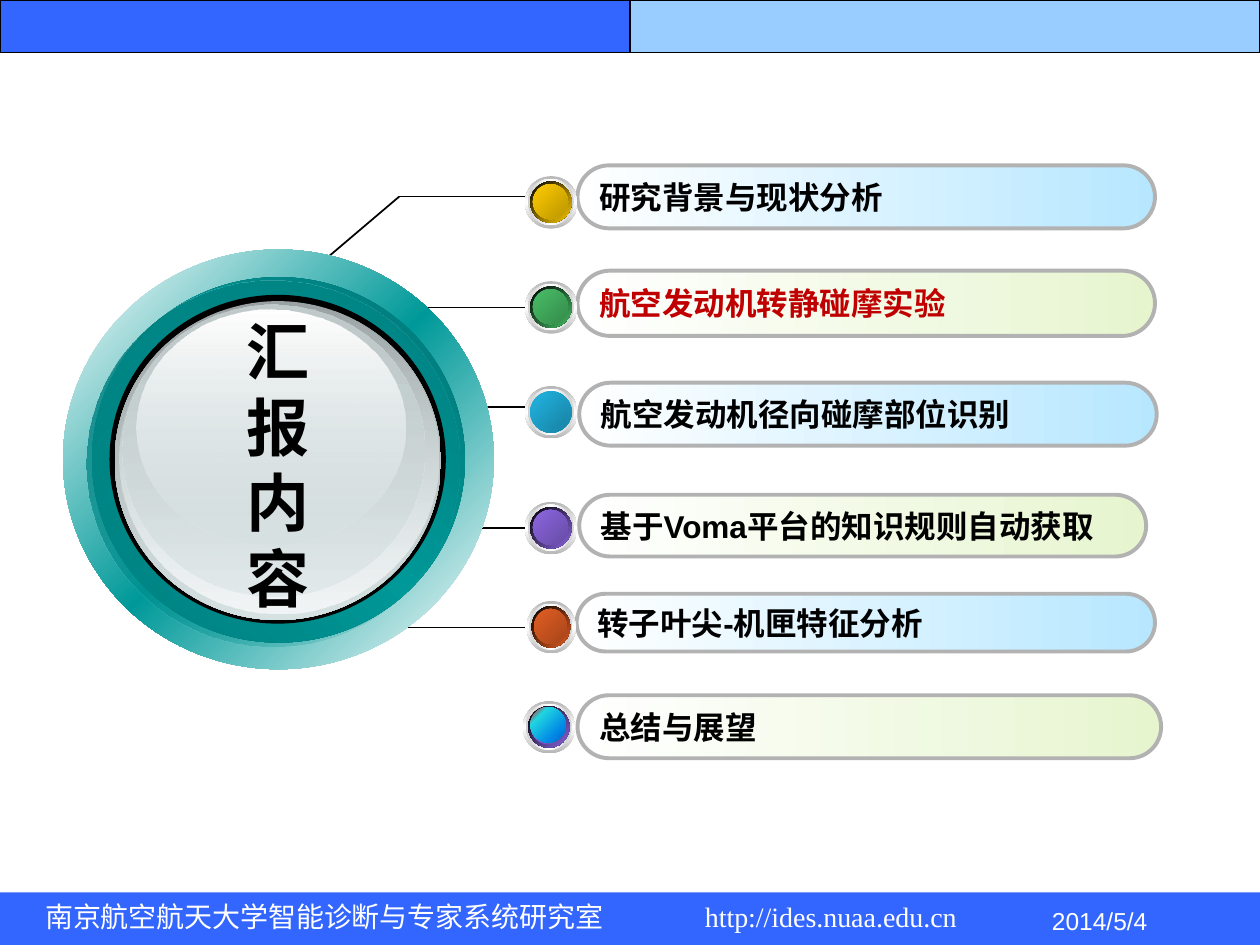
from lxml.etree import SubElement
from pptx import Presentation
from pptx.dml.color import RGBColor
from pptx.enum.shapes import MSO_CONNECTOR, MSO_SHAPE
from pptx.enum.text import MSO_ANCHOR, MSO_AUTO_SIZE, PP_ALIGN
from pptx.oxml.ns import qn
from pptx.util import Pt

COLORS = {
    "blue": "3366FF", "sky": "99CCFF", "black": "000000", "white": "FFFFFF",
    "red": "C00000", "border": "B2B2B2", "ice": "B7E7FF", "lime": "E7F5CF",
    "teal": "009999", "teal_dark": "007575", "teal_deep": "007E7E",
    "steel": "99A1A2", "mist": "D6E1E2", "pearl": "F2F5F5", "fog": "C1CBCC",
    "rim": "B6B6B6", "rim_light": "D1D1D1",
    "gold": "FFCC00", "gold_dark": "BA9500", "green": "48BE67", "green_dark": "358B4B",
    "cyan": "21B3E1", "cyan_dark": "1883A4",
    "violet": "8D67E1", "violet_dark": "674BA4", "orange": "E35E23", "orange_dark": "A6451A",
    "hot": "FF0000", "aqua": "21D6E0", "azure": "0087E6", "navy": "005CBF",
}

DISC_LAYERS = [
    ((0, 0, 246.2, 239.8), [(0, "white"), (50, "teal"), (100, "white")], 45),
    ((16.6, 15.8, 213.1, 208.8), [(0, "teal_dark"), (50, "teal"), (100, "teal_dark")], 315),
    ((13.7, 18, 213.1, 208.8), [(0, "teal_deep"), (100, "teal", 0)], 45),
    ((26.6, 25.9, 192.2, 187.9), "black", 0),
    ((29.5, 29.5, 186.5, 182.2), [(0, "steel"), (100, "mist")], 90),
    ((32.4, 30.2, 182.2, 177.8), [(0, "mist", 0), (100, "pearl")], 90),
    ((33.8, 31.7, 172.8, 166.3), [(0, "fog"), (100, "mist", 48)], 90),
    ((41.8, 34.6, 154.1, 134.6), [(0, "white"), (100, "mist", 38)], 90),
]

LEADERS = [
    (185.8, 148.3, 228.2, 112.3), (228.2, 112.3, 307.4, 112.3), (219.6, 175.7, 310.3, 175.7),
    (257, 232.6, 300.2, 232.6), (257.8, 301.7, 306, 301.7), (209.5, 358.6, 300.2, 358.6),
]

TOPICS = [
    ("研究背景与现状分析", (330, 94.5, 330, 36), (300, 100.7, 30, 30), "gold"),
    ("航空发动机转静碰摩实验", (330, 154.7, 330, 37.3), (300, 160.7, 30, 30), "green"),
    ("航空发动机径向碰摩部位识别", (331, 218.7, 330, 36), (300, 220.6, 30, 30), "cyan"),
    ("基于Voma平台的知识规则自动获取", (331, 282.7, 324, 35.3), (300, 286.8, 30, 30), "violet"),
    ("转子叶尖-机匣特征分析", (329.5, 339.3, 330.5, 33), (301, 343.4, 28, 30), "orange"),
    ("总结与展望", (330, 397.3, 333.5, 36), (298.8, 400.6, 30, 30), "violet"),
]


def rgb(name):
    """Return the colour stored under a name."""
    return RGBColor.from_string(COLORS[name])


def set_gradient(sp, stops, angle):
    """Fill a shape with a clockwise linear gradient of (position, colour, opacity) stops."""
    sp.fill.gradient()
    grad = sp._element.spPr.find(qn("a:gradFill"))
    for child in list(grad):
        grad.remove(child)
    gs_list = SubElement(grad, qn("a:gsLst"))
    for position, color, *opacity in stops:
        gs = SubElement(gs_list, qn("a:gs"), pos=str(position * 1000))
        clr = SubElement(gs, qn("a:srgbClr"), val=COLORS[color])
        for value in opacity:
            SubElement(clr, qn("a:alpha"), val=str(value * 1000))
    SubElement(grad, qn("a:lin"), ang=str(angle * 60000), scaled="0")


def add_shape(s, kind, box, fill, angle=0, line=None, width=0.75):
    """Add a preset shape with a solid or gradient fill and an optional outline."""
    sp = s.shapes.add_shape(kind, *map(Pt, box))
    sp.shadow.inherit = False
    if isinstance(fill, str):
        sp.fill.solid()
        sp.fill.fore_color.rgb = rgb(fill)
    else:
        set_gradient(sp, fill, angle)
    if line:
        sp.line.color.rgb = rgb(line)
        sp.line.width = Pt(width)
    else:
        sp.line.fill.background()
    return sp


def write_text(sp, text, size=18, font="Arial", color="black", bold=False,
               align=PP_ALIGN.LEFT, anchor=MSO_ANCHOR.TOP, spacing=None):
    """Write text into a shape, one paragraph per line."""
    tf = sp.text_frame
    tf.word_wrap = True
    tf.auto_size = MSO_AUTO_SIZE.NONE
    tf.vertical_anchor = anchor
    tf.text = text
    for p in tf.paragraphs:
        p.alignment = align
        if spacing:
            p.line_spacing = Pt(spacing)
        for r in p.runs:
            r.font.name, r.font.size, r.font.bold = font, Pt(size), bold
            r.font.color.rgb = rgb(color)


def add_header(s, box):
    """Draw the two-tone band across the top."""
    x, y, w, h = box
    for i, fill in enumerate(("blue", "sky")):
        add_shape(s, MSO_SHAPE.RECTANGLE, (x + i * w / 2, y, w / 2, h), fill, line="black")


def add_footer(s, box):
    """Draw the bottom band with institute, address and date."""
    x, y, w, h = box
    add_shape(s, MSO_SHAPE.RECTANGLE, box, "blue")
    entries = [
        (18.7, 4.5, 370, "南京航空航天大学智能诊断与专家系统研究室", {"size": 16, "spacing": 15}),
        (395.7, 4.5, 190, "http://ides.nuaa.edu.cn",
         {"size": 16, "spacing": 15, "font": "Times New Roman"}),
        (594, 4, 126, "2014/5/4", {"size": 14}),
    ]
    for left, top, width, text, style in entries:
        sp = s.shapes.add_textbox(Pt(x + left), Pt(y + top), Pt(width), Pt(h - top))
        write_text(sp, text, color="white", **style)


def add_leaders(s):
    """Draw the lines that lead from the disc to the topics."""
    for ends in LEADERS:
        line = s.shapes.add_connector(MSO_CONNECTOR.STRAIGHT, *map(Pt, ends))
        line.line.color.rgb = rgb("black")
        line.line.width = Pt(1)
        SubElement(line._element.spPr, qn("a:effectLst"))


def add_disc(s, box):
    """Draw the glossy disc and set the title on top of it."""
    x, y = box[:2]
    for (left, top, w, h), fill, angle in DISC_LAYERS:
        add_shape(s, MSO_SHAPE.OVAL, (x + left, y + top, w, h), fill, angle)
    title = s.shapes.title
    title.left, title.top, title.width, title.height = map(Pt, (x + 28, y + 32.4, 189.4, 180))
    write_text(title, "\n".join("汇报内容"), size=36, font="Calibri", bold=True,
               align=PP_ALIGN.CENTER)
    s.shapes._spTree.append(title._element)


def add_orb(s, box, color):
    """Draw a coloured button in a metal rim."""
    x, y, w, h = box
    shade = [(0, color), (100, color + "_dark")]
    edge = shade if color == "cyan" else [(0, "black"), (100, color)]
    layers = [
        (0, 1, [(0, "rim"), (50, "white"), (100, "rim")], 90),
        (0.05, 0.88, [(0, "rim_light"), (50, "white"), (100, "rim_light")], 0),
        (0.1, 0.79, edge, 45),
        (0.15, 0.67, shade, 45),
    ]
    for inset, scale, stops, angle in layers:
        part = (x + inset * w, y + inset * h, scale * w, scale * h)
        add_shape(s, MSO_SHAPE.OVAL, part, stops, angle)


def add_pill(s, box, text, tint, color):
    """Draw a rounded bar with a topic."""
    sp = add_shape(s, MSO_SHAPE.ROUNDED_RECTANGLE, box, [(0, "white"), (100, tint)],
                   line="border", width=2.25)
    sp.adjustments[0] = 0.5
    write_text(sp, text, color=color, bold=True, anchor=MSO_ANCHOR.MIDDLE)


def add_topics(s):
    """Place the list of topics, with the current one in red."""
    for i, (text, pill, orb, color) in enumerate(TOPICS):
        add_pill(s, pill, text, ("ice", "lime")[i % 2], "red" if i == 1 else "black")
        add_orb(s, orb, color)
    x, y = TOPICS[-1][2][:2]
    add_shape(s, MSO_SHAPE.OVAL, (x + 4.3, y + 3.5, 20.2, 20.2),
              [(0, "hot"), (25, "aqua"), (75, "azure"), (100, "navy")], 45)


def main():
    """Build the agenda slide and save it."""
    prs = Presentation()
    prs.slide_width, prs.slide_height = Pt(720), Pt(540)
    s = prs.slides.add_slide(prs.slide_layouts[5])
    add_header(s, (0, 0, 720, 30))
    add_footer(s, (0, 510, 720, 30))
    add_leaders(s)
    add_disc(s, (36, 142.6, 246.2, 239.8))
    add_topics(s)
    prs.save("out.pptx")


if __name__ == "__main__":
    main()
